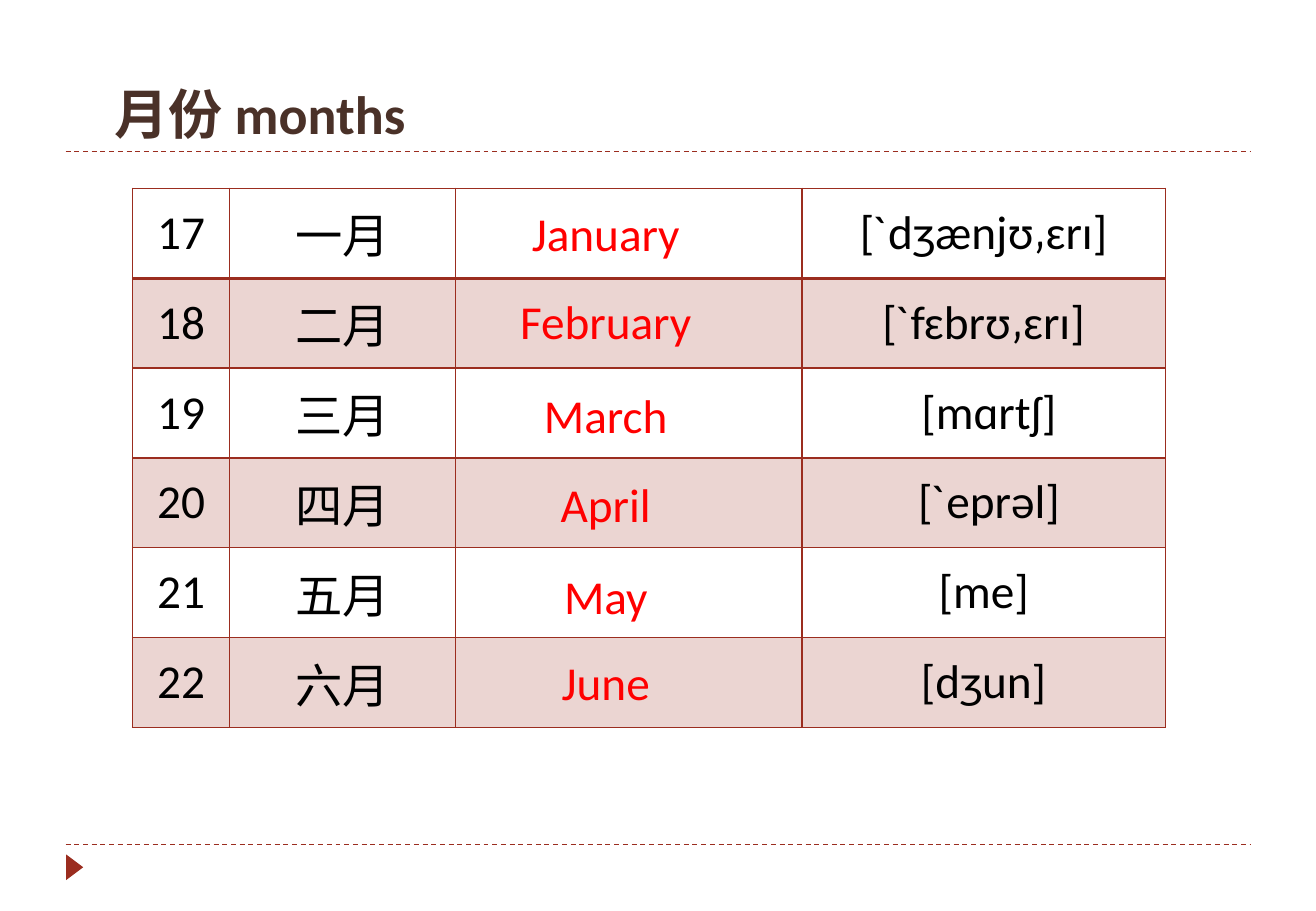
import pptx
import pptx.util
import pptx.dml.color
import pptx.enum.dml
import pptx.enum.shapes
import pptx.enum.text
import pptx.oxml.ns
import lxml.etree

Inches, Pt = pptx.util.Inches, pptx.util.Pt
RGBColor = pptx.dml.color.RGBColor
Anchor = pptx.enum.text.MSO_ANCHOR
Align = pptx.enum.text.PP_ALIGN

# Content: number, Chinese, English, sound, top of the English word
MONTHS = [
    ("17", "一月", "January", "[ˋdʒænjʊ͵ɛrɪ]", 1.63),
    ("18", "二月", "February", "[ˋfɛbrʊ͵ɛrɪ]", 2.36),
    ("19", "三月", "March", " [mɑrtʃ]", 3.13),
    ("20", "四月", "April", " [ˋeprəl]", 3.86),
    ("21", "五月", "May", "[me]", 4.62),
    ("22", "六月", "June", " [dʒun] ", 5.33),
]
TITLE = [("月份 ", "Noto Sans CJK SC"), ("months", "Calibri")]

# Look
RUST = RGBColor(0x9B, 0x2D, 0x1F)
BROWN = RGBColor(0x4A, 0x31, 0x28)
BLACK = RGBColor(0, 0, 0)
RED = RGBColor(0xFF, 0, 0)
LATIN, HAN = "Calibri", "Noto Sans CJK SC"
COLS = [0.8, 1.86, 2.85, 2.99]
ROW = 0.74
LEFT, TOP = 1.09, 1.55
CELL = {
    "vertical_anchor": Anchor.MIDDLE,
    "margin_left": Inches(0.07), "margin_right": Inches(0.07),
    "margin_top": 0, "margin_bottom": 0,
}
HEAD = {
    "vertical_anchor": Anchor.BOTTOM, "word_wrap": True,
    "margin_left": Inches(0.4), "margin_right": Inches(0.1),
    "margin_top": Inches(0.05), "margin_bottom": Inches(0.05),
}
PLAIN = {"first_row": False, "horz_banding": False}


def apply(item, values):
    for name, value in values.items():
        setattr(item, name, value)


def sub(parent, tag, **attrs):
    name = pptx.oxml.ns.qn(tag)
    return lxml.etree.SubElement(parent, name, **attrs)


def write(para, text, face, color, size=28, bold=False):
    run = para.add_run()
    run.text = text
    apply(run.font, {"name": face, "size": Pt(size), "bold": bold})
    run.font.color.rgb = color
    sub(run.font._element, "a:ea", typeface=face)


def border(cell, thick):
    props = cell._tc.get_or_add_tcPr()
    for side in ("L", "R", "T", "B"):
        width = Pt(thick.get(side, 1))
        line = sub(props, "a:ln" + side, w=str(width))
        fill = sub(line, "a:solidFill")
        sub(fill, "a:srgbClr", val=str(RUST))


def shade(cell):
    cell.fill.solid()
    cell.fill.fore_color.rgb = RUST
    tint = cell._tc.tcPr.find("a:solidFill/a:srgbClr", pptx.oxml.ns._nsmap)
    sub(tint, "a:alpha", val="20000")


deck = pptx.Presentation()
apply(deck, {"slide_width": Inches(10.83), "slide_height": Inches(7.5)})
slide = deck.slides.add_slide(deck.slide_layouts[5])
shapes = slide.shapes

# Dashed rules
for y in (6.95, 1.25):
    rule = shapes.add_connector(
        pptx.enum.shapes.MSO_CONNECTOR.STRAIGHT,
        Inches(0.54), Inches(y), Inches(10.29), Inches(y))
    rule.line.color.rgb = RUST
    rule.line.width = Pt(0.75)
    rule.line.dash_style = pptx.enum.dml.MSO_LINE.DASH
    sub(rule._element.spPr, "a:effectLst")

# Corner marker
mark = shapes.add_shape(
    pptx.enum.shapes.MSO_SHAPE.ISOSCELES_TRIANGLE,
    Inches(0.51), Inches(7.07), Inches(0.21), Inches(0.14))
mark.rotation = 90
mark.shadow.inherit = False
mark.fill.solid()
mark.fill.fore_color.rgb = RUST
mark.line.fill.background()

# Title
title = shapes.title
apply(title, {"left": Inches(0.54), "top": Inches(0.25),
              "width": Inches(9.75), "height": Inches(1)})
apply(title.text_frame, HEAD)
para = title.text_frame.paragraphs[0]
para.alignment = Align.LEFT
for text, face in TITLE:
    write(para, text, face, BROWN, 32, True)

# Table
table = shapes.add_table(
    len(MONTHS), len(COLS), Inches(LEFT), Inches(TOP),
    Inches(sum(COLS)), Inches(ROW * len(MONTHS))).table
apply(table, PLAIN)
for col, width in zip(table.columns, COLS):
    col.width = Inches(width)
for r, (number, han, word, sound, top) in enumerate(MONTHS):
    table.rows[r].height = Inches(ROW)
    thick = {0: {"B": 2}, 1: {"T": 2}}.get(r, {})
    for c, text in enumerate((number, han, "", sound)):
        cell = table.cell(r, c)
        apply(cell, CELL)
        border(cell, thick)
        if r % 2:
            shade(cell)
        else:
            cell.fill.background()
        if text:
            para = cell.text_frame.paragraphs[0]
            para.alignment = Align.CENTER
            write(para, text, HAN if c == 1 else LATIN, BLACK)

# English words over the third column
for number, han, word, sound, top in MONTHS:
    box = shapes.add_textbox(
        Inches(4.08), Inches(top), Inches(1.81), Inches(0.57))
    box.text_frame.word_wrap = True
    para = box.text_frame.paragraphs[0]
    para.alignment = Align.CENTER
    write(para, word, LATIN, RED)

deck.save("out.pptx")
